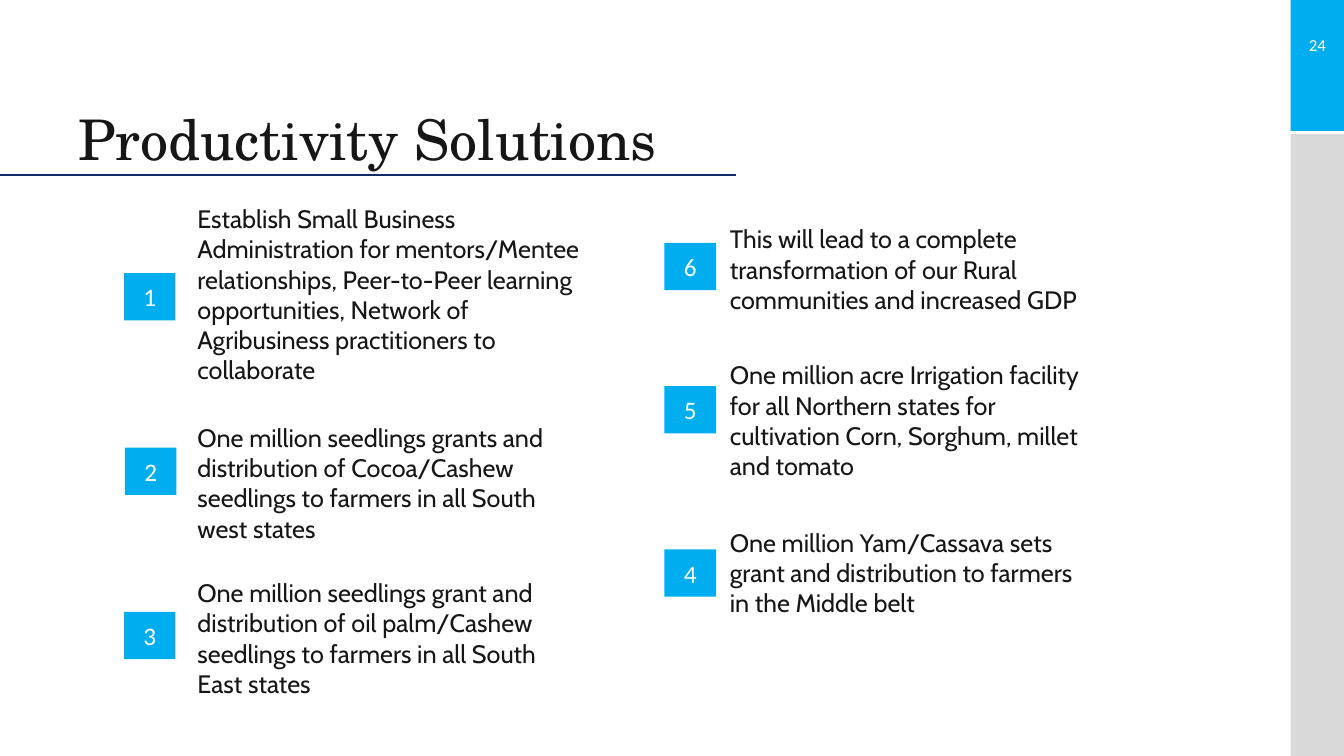
"""Build the Productivity Solutions slide with six numbered points."""
from dataclasses import dataclass

from lxml import etree
from pptx import Presentation
from pptx.dml.color import RGBColor
from pptx.enum import shapes, text
from pptx.oxml import ns
from pptx.util import Inches, Pt


@dataclass(frozen=True)
class Theme:
    """Colours, fonts and type sizes."""
    ink: str = "171616"
    white: str = "FFFFFF"
    cyan: str = "00AEEF"
    grey: str = "D9D9D9"
    navy: str = "122867"
    serif: str = "TeX Gyre Schola"
    sans: str = "Cabin"
    plain: str = "Calibri"
    title: float = 40
    body: float = 18
    small: float = 12


@dataclass(frozen=True)
class Box:
    """A rectangle in inches."""
    left: float
    top: float
    width: float
    height: float

    def emu(self) -> tuple:
        """Return the rectangle as lengths."""
        return tuple(map(Inches, (self.left, self.top, self.width, self.height)))


@dataclass(frozen=True)
class Style:
    """The look of one line of text."""
    font: str
    size: float
    color: str
    align: text.PP_ALIGN = text.PP_ALIGN.LEFT
    anchor: text.MSO_ANCHOR = text.MSO_ANCHOR.TOP
    grow: bool = False


@dataclass(frozen=True)
class Point:
    """A numbered tile and the text beside it."""
    num: int
    tile: tuple
    area: Box
    words: str


THEME = Theme()
MID = (text.PP_ALIGN.CENTER, text.MSO_ANCHOR.MIDDLE)
TITLE = Style(THEME.serif, THEME.title, THEME.ink, anchor=text.MSO_ANCHOR.BOTTOM)
BODY = Style(THEME.sans, THEME.body, THEME.ink, grow=True)
TILE = Style(THEME.plain, THEME.body, THEME.white, *MID)
PAGE = Style(THEME.plain, THEME.small, THEME.white, *MID, grow=True)

POINTS = (
    Point(1, (1.23, 2.71), Box(1.86, 1.97, 4.17, 1.92),
          "Establish Small Business Administration for mentors/Mentee "
          "relationships, Peer-to-Peer learning opportunities, Network of "
          "Agribusiness practitioners to collaborate"),
    Point(2, (1.24, 4.44), Box(1.86, 4.14, 3.78, 1.31),
          "One million seedlings grants and distribution of Cocoa/Cashew "
          "seedlings to farmers in all South west states"),
    Point(3, (1.23, 6.07), Box(1.86, 5.68, 3.78, 1.31),
          "One million seedlings grant and distribution of oil palm/Cashew "
          "seedlings to farmers in all South East states"),
    Point(4, (6.59, 5.45), Box(7.14, 5.18, 3.78, 1.01),
          "One million Yam/Cassava sets grant and distribution to farmers "
          "in the Middle belt"),
    Point(5, (6.59, 3.83), Box(7.14, 3.52, 3.78, 1.31),
          "One million acre Irrigation facility for all Northern states for "
          "cultivation Corn, Sorghum, millet and tomato"),
    Point(6, (6.59, 2.41), Box(7.14, 2.17, 3.78, 1.01),
          "This will lead to a complete transformation of our Rural "
          "communities and increased GDP"),
)


def write(shape, words: str, style: Style):
    """Put styled text in a shape and return its paragraph."""
    frame = shape.text_frame
    frame.text = words
    frame.word_wrap = True
    frame.vertical_anchor = style.anchor
    if style.grow:
        frame.auto_size = text.MSO_AUTO_SIZE.SHAPE_TO_FIT_TEXT
    para = frame.paragraphs[0]
    para.alignment = style.align
    font = para.runs[0].font
    font.name = style.font
    font.size = Pt(style.size)
    font.color.rgb = RGBColor.from_string(style.color)
    return para


def label(slide, box: Box, words: str, style: Style):
    """Add a text box and return its paragraph."""
    return write(slide.shapes.add_textbox(*box.emu()), words, style)


def block(slide, box: Box, color: str):
    """Add a plain filled rectangle."""
    shape = slide.shapes.add_shape(shapes.MSO_SHAPE.RECTANGLE, *box.emu())
    shape.shadow.inherit = False
    shape.fill.solid()
    shape.fill.fore_color.rgb = RGBColor.from_string(color)
    shape.line.fill.background()
    return shape


def rule(slide, top: float, width: float) -> None:
    """Draw the line under the title."""
    line = slide.shapes.add_connector(
        shapes.MSO_CONNECTOR.STRAIGHT, 0, Inches(top), Inches(width), Inches(top))
    line.line.color.rgb = RGBColor.from_string(THEME.navy)
    line.line.width = Pt(1.5)
    etree.SubElement(line._element.spPr, ns.qn("a:effectLst"))


def item(slide, point: Point) -> None:
    """Draw one numbered point."""
    label(slide, point.area, point.words, BODY)
    tile = block(slide, Box(*point.tile, 0.51, 0.47), THEME.cyan)
    write(tile, str(point.num), TILE)


def main() -> None:
    """Build and save the deck."""
    deck = Presentation()
    deck.slide_width, deck.slide_height = Inches(13.33), Inches(7.5)
    slide = deck.slides.add_slide(deck.slide_layouts[6])
    block(slide, Box(12.8, 0, 0.53, 1.3), THEME.cyan)
    block(slide, Box(12.8, 1.33, 0.53, 6.17), THEME.grey)
    label(slide, Box(12.74, 0.29, 0.65, 0.3), "24", PAGE)
    rule(slide, 1.74, 7.3)
    head = label(slide, Box(0.68, 0.99, 8.35, 0.77), "Productivity Solutions", TITLE)
    head.line_spacing = 0.9
    for point in POINTS:
        item(slide, point)
    deck.save("out.pptx")


if __name__ == "__main__":
    main()
